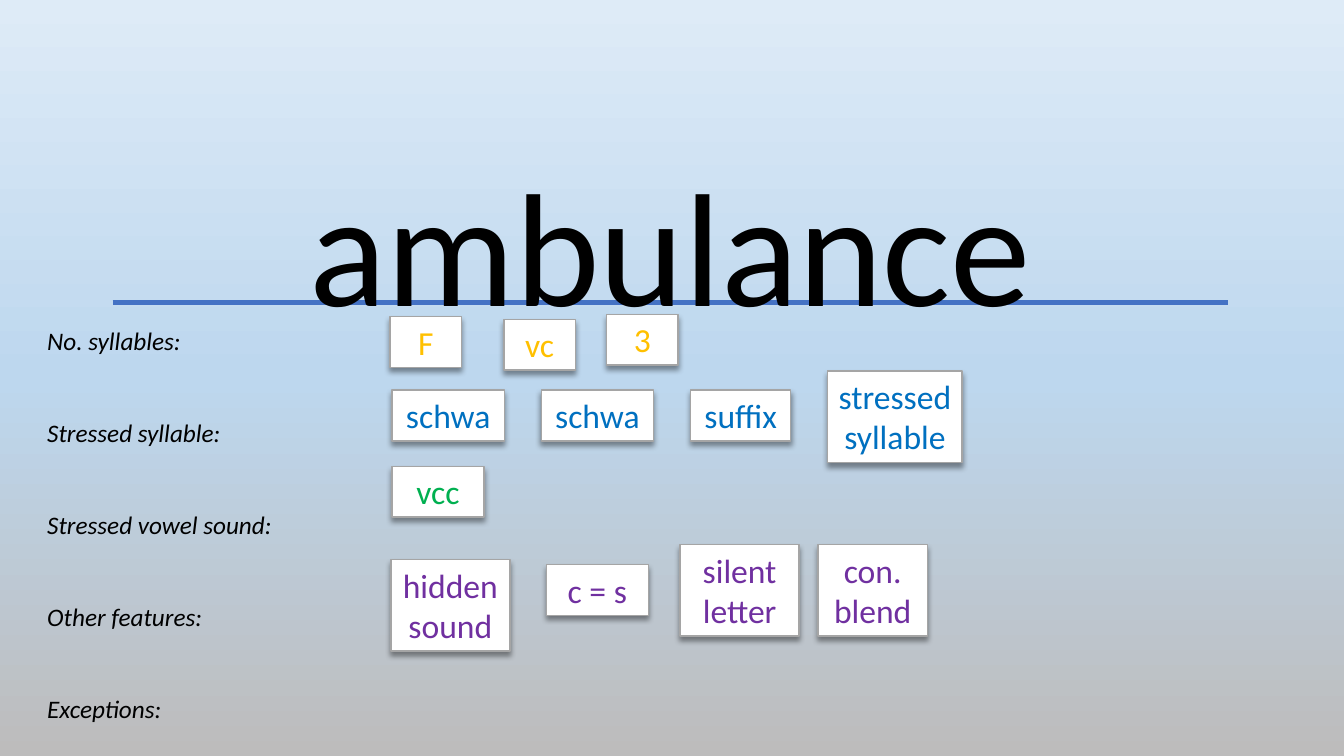
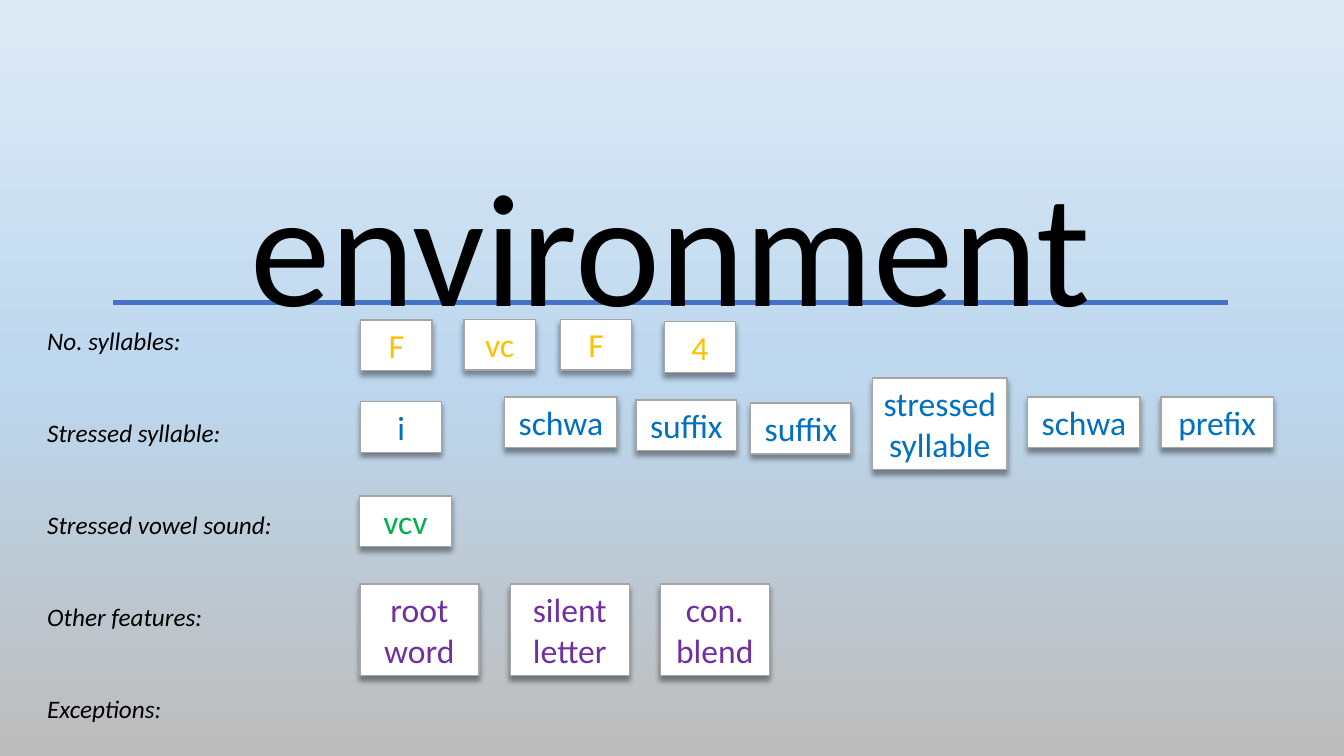
from copy import deepcopy

from lxml import etree
from pptx import Presentation
from pptx.dml.color import RGBColor
from pptx.enum.shapes import MSO_CONNECTOR as Connector, MSO_SHAPE as Shape
from pptx.enum.text import MSO_ANCHOR as Anchor, MSO_AUTO_SIZE as AutoSize, PP_ALIGN as Align
from pptx.oxml.ns import qn
from pptx.util import Cm, Pt

SYLLABLES, STRESS, VOWEL, FEATURES = "FFC000", "0070C0", "00B050", "7030A0"
LABELS = ["No. syllables:", "Stressed syllable:", "Stressed vowel sound:",
          "Other features:", "Exceptions:"]

SHORT, TALL = 1.28, 2.31
TILE_SIZES = {
    "F": (1.8, SHORT), "vc": (1.8, SHORT), "3": (1.8, SHORT), "4": (1.8, SHORT),
    "schwa": (2.83, SHORT), "prefix": (2.83, SHORT), "suffix": (2.53, SHORT),
    "i": (2.04, SHORT), "vcc": (2.32, SHORT), "vcv": (2.32, SHORT), "c = s": (2.57, SHORT),
    "stressed\nsyllable": (3.39, TALL), "silent\nletter": (3, TALL), "root\nword": (3, TALL),
    "hidden sound": (3, TALL), "con. blend": (2.75, TALL),
}

# Each word has rows of tiles: (text, left, top) in centimetres.
WORDS = {
    "ambulance": {
        SYLLABLES: [("F", 9.83, 7.98), ("vc", 12.7, 8.05), ("3", 15.29, 7.92)],
        STRESS: [("schwa", 9.88, 9.83), ("schwa", 13.64, 9.83), ("suffix", 17.4, 9.83),
                 ("stressed\nsyllable", 20.86, 9.35)],
        VOWEL: [("vcc", 9.88, 11.75)],
        FEATURES: [("hidden sound", 9.85, 14.1), ("c = s", 13.77, 14.23),
                   ("silent\nletter", 17.14, 13.72), ("con. blend", 20.62, 13.72)],
    },
    "environment": {
        SYLLABLES: [("F", 9.09, 8.06), ("vc", 11.69, 8.05), ("F", 14.12, 8.05), ("4", 16.74, 8.11)],
        STRESS: [("i", 9.09, 10.12), ("schwa", 12.72, 10), ("suffix", 16.03, 10.08),
                 ("suffix", 18.92, 10.16), ("stressed\nsyllable", 21.99, 9.53),
                 ("schwa", 25.9, 10), ("prefix", 29.26, 10)],
        VOWEL: [("vcv", 9.06, 12.5)],
        FEATURES: [("root\nword", 9.07, 14.72), ("silent\nletter", 12.86, 14.72),
                   ("con. blend", 16.64, 14.72)],
    },
}


def color(value):
    return RGBColor.from_string(value)


class WordDeck:
    FONT = "Calibri"
    TEXT, WHITE, RULE, TILE_BORDER = "000000", "FFFFFF", "4472C4", "A5A5A5"
    BACKGROUND = [(0, "DEEBF7"), (0.5, "BDD7EE"), (1, "BDBCBC")]

    def __init__(self):
        self.presentation = Presentation()
        self.presentation.slide_width = Cm(33.87)
        self.presentation.slide_height = Cm(19.05)
        self.slide = None
        self.paint_background()

    def paint_background(self):
        master = self.presentation.slide_master
        fill = master.background.fill
        fill.gradient()
        fill.gradient_angle = 270
        stop_list = next(master.element.iter(qn("a:gsLst")))
        stop_list.append(deepcopy(stop_list[0]))
        for stop, (position, value) in zip(fill.gradient_stops, self.BACKGROUND):
            stop.position = position
            stop.color.rgb = color(value)

    def add_slide(self, word):
        self.slide = self.presentation.slides.add_slide(self.presentation.slide_layouts[5])
        self.add_word(word)
        self.add_rule()
        self.add_labels()

    def style(self, paragraph, size, value, align):
        paragraph.alignment = align
        paragraph.font.name = self.FONT
        paragraph.font.size = Pt(size)
        paragraph.font.color.rgb = color(value)

    def add_word(self, word):
        title = self.slide.shapes.title
        title.left, title.top, title.width, title.height = Cm(3.5), Cm(3.53), Cm(26.8), Cm(5.18)
        frame = title.text_frame
        frame.text = word
        frame.auto_size = AutoSize.NONE
        frame.vertical_anchor = Anchor.TOP
        self.style(frame.paragraphs[0], 115, self.TEXT, Align.CENTER)

    def add_rule(self):
        """Draw the writing line and send it behind the word."""
        rule = self.slide.shapes.add_connector(
            Connector.STRAIGHT, Cm(2.84), Cm(7.62), Cm(30.94), Cm(7.62))
        rule.line.color.rgb = color(self.RULE)
        rule.line.width = Pt(3)
        etree.SubElement(rule.element.spPr, qn("a:effectLst"))
        title = self.slide.shapes.title
        title.element.addprevious(rule.element)

    def add_labels(self):
        box = self.slide.shapes.add_textbox(Cm(0.94), Cm(8.08), Cm(6.22), Cm(10.26))
        frame = box.text_frame
        frame.word_wrap = True
        frame.text = "\n".join(LABELS)
        for index, paragraph in enumerate(frame.paragraphs):
            self.style(paragraph, 18, self.TEXT, Align.LEFT)
            paragraph.font.italic = True
            paragraph.space_before = Pt(44 if index else 0)

    def add_tile(self, text, left, top, text_color):
        width, height = TILE_SIZES[text]
        tile = self.slide.shapes.add_shape(
            Shape.RECTANGLE, Cm(left), Cm(top), Cm(width), Cm(height))
        tile.fill.solid()
        tile.fill.fore_color.rgb = color(self.WHITE)
        tile.line.color.rgb = color(self.TILE_BORDER)
        tile.line.width = Pt(1)
        self.add_shadow(tile)
        frame = tile.text_frame
        frame.word_wrap = True
        frame.vertical_anchor = Anchor.TOP
        frame.text = text
        for paragraph in frame.paragraphs:
            self.style(paragraph, 24, text_color, Align.CENTER)

    def add_shadow(self, shape):
        shape.shadow.inherit = False
        effects = shape.element.spPr.find(qn("a:effectLst"))
        shadow = etree.SubElement(
            effects, qn("a:outerShdw"), blurRad=str(Pt(4)), dist=str(Pt(3)),
            dir="5400000", rotWithShape="0")
        shade = etree.SubElement(shadow, qn("a:srgbClr"), val=self.TEXT)
        etree.SubElement(shade, qn("a:alpha"), val="40000")


def main():
    deck = WordDeck()
    for word, rows in WORDS.items():
        deck.add_slide(word)
        for text_color, tiles in rows.items():
            for text, left, top in tiles:
                deck.add_tile(text, left, top, text_color)
    deck.presentation.save("out.pptx")


if __name__ == "__main__":
    main()
